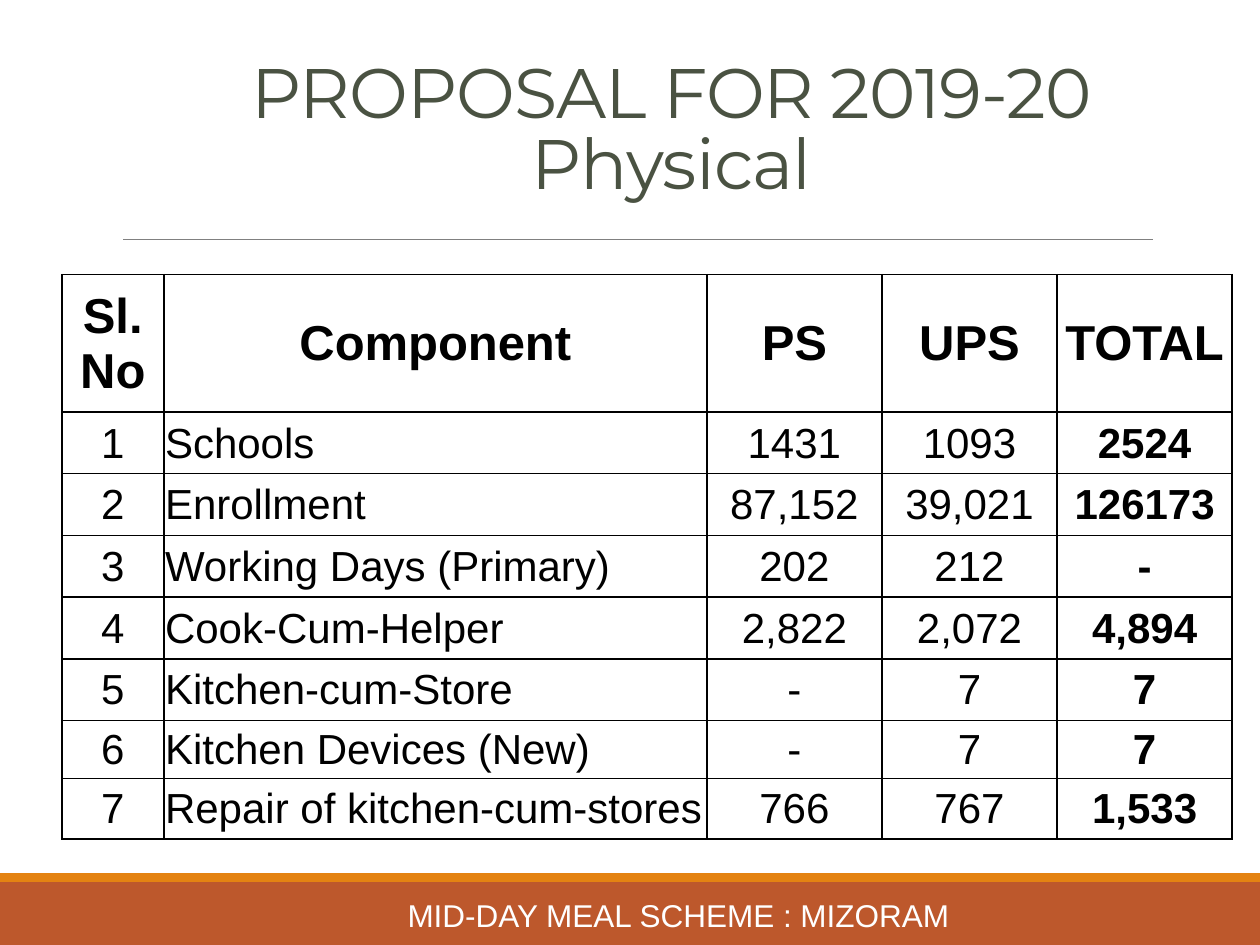
from pptx import Presentation
from pptx.dml.color import RGBColor
from pptx.enum.shapes import MSO_CONNECTOR, MSO_SHAPE
from pptx.enum.text import MSO_ANCHOR, PP_ALIGN
from pptx.oxml.ns import qn
from pptx.util import Inches, Pt
from lxml.etree import SubElement

COLORS = {
    "title": "4A5242",
    "text": "000000",
    "border": "000000",
    "cell": "FFFFFF",
    "footer": "BD582C",
    "stripe": "E48312",
    "footer_text": "FFFFFF",
    "rule": "808080",
}
HEADER = ["Sl. No", "Component", "PS", "UPS", "TOTAL"]
COMPONENTS = [
    ("Schools", "1431", "1093", "2524"),
    ("Enrollment", "87,152", "39,021", "126173"),
    ("Working Days (Primary)", "202", "212", "-"),
    ("Cook-Cum-Helper", "2,822", "2,072", "4,894"),
    ("Kitchen-cum-Store", "-", "7", "7"),
    ("Kitchen Devices (New)", "-", "7", "7"),
    ("Repair of kitchen-cum-stores", "766", "767", "1,533"),
]
COLUMN_WIDTHS = [0.81, 4.31] + [1.39] * 3
ROW_HEIGHTS = [1.09] + [0.49] * 5 + [0.46, 0.48]


def rgb(name):
    return RGBColor.from_string(COLORS[name])


def style(paragraph, font_name, size, color, align=PP_ALIGN.CENTER, bold=False):
    paragraph.alignment = align
    font = paragraph.font
    font.name, font.size, font.bold = font_name, Pt(size), bold
    font.color.rgb = rgb(color)


def add_band(slide, top, height, color):
    """Draw a full-width bar at the foot of the slide."""
    band = slide.shapes.add_shape(
        MSO_SHAPE.RECTANGLE, 0, Inches(top), Inches(10), Inches(height))
    band.shadow.inherit = False
    band.fill.solid()
    band.fill.fore_color.rgb = rgb(color)
    band.line.fill.background()


def add_rule(slide, left, right, y):
    rule = slide.shapes.add_connector(
        MSO_CONNECTOR.STRAIGHT, Inches(left), Inches(y), Inches(right), Inches(y))
    rule.line.color.rgb = rgb("rule")
    rule.line.width = Pt(0.5)
    SubElement(rule._element.spPr, qn("a:effectLst"))


def add_text(slide, box, text, anchor, font_name, size, color):
    frame = slide.shapes.add_textbox(*map(Inches, box)).text_frame
    frame.word_wrap = True
    frame.vertical_anchor = anchor
    paragraph = frame.paragraphs[0]
    paragraph.text = text
    style(paragraph, font_name, size, color)
    return paragraph


def add_borders(cell):
    properties = cell._tc.get_or_add_tcPr()
    for position, side in enumerate(("a:lnL", "a:lnR", "a:lnT", "a:lnB")):
        border = properties.makeelement(qn(side), {"w": str(Pt(1))})
        properties.insert(position, border)
        fill = SubElement(border, qn("a:solidFill"))
        SubElement(fill, qn("a:srgbClr"), val=COLORS["border"])


def fill_cell(cell, text, size, align, bold):
    cell.text = text
    cell.vertical_anchor = MSO_ANCHOR.MIDDLE
    cell.margin_left = cell.margin_right = cell.margin_top = Inches(0.01)
    cell.margin_bottom = 0
    cell.fill.solid()
    cell.fill.fore_color.rgb = rgb("cell")
    style(cell.text_frame.paragraphs[0], "Arial", size, "text", align, bold)
    add_borders(cell)


def add_proposal_table(slide, left, top):
    rows = [HEADER] + [(str(number), *component)
                       for number, component in enumerate(COMPONENTS, 1)]
    table = slide.shapes.add_table(
        len(rows), len(HEADER), Inches(left), Inches(top),
        Inches(sum(COLUMN_WIDTHS)), Inches(sum(ROW_HEIGHTS))).table
    for column, width in zip(table.columns, COLUMN_WIDTHS):
        column.width = Inches(width)
    for row, height in zip(table.rows, ROW_HEIGHTS):
        row.height = Inches(height)
    for r, values in enumerate(rows):
        is_header = r == 0
        for c, value in enumerate(values):
            is_name = HEADER[c] == "Component" and not is_header
            fill_cell(table.cell(r, c), value,
                      size=28 if is_header else 24,
                      align=PP_ALIGN.LEFT if is_name else PP_ALIGN.CENTER,
                      bold=is_header or HEADER[c] == "TOTAL")


def main():
    deck = Presentation()
    deck.slide_width, deck.slide_height = Inches(10), Inches(7.5)
    slide = deck.slides.add_slide(deck.slide_layouts[6])

    add_band(slide, 7, 0.5, "footer")
    add_band(slide, 6.93, 0.07, "stripe")
    add_rule(slide, 0.98, 9.15, 1.9)

    title = add_text(slide, (0.83, 0.81, 9, 0.86), "PROPOSAL FOR 2019-20\vPhysical",
                     MSO_ANCHOR.BOTTOM, "Montserrat", 40, "title")
    title.line_spacing = 0.85
    for run in title.runs:
        run.font._element.set("spc", "-50")

    add_text(slide, (3.02, 7.06, 4.73, 0.4), "MID-DAY MEAL SCHEME : MIZORAM",
             MSO_ANCHOR.MIDDLE, "Arial", 18, "footer_text")
    add_proposal_table(slide, 0.49, 2.18)
    deck.save("out.pptx")


if __name__ == "__main__":
    main()
